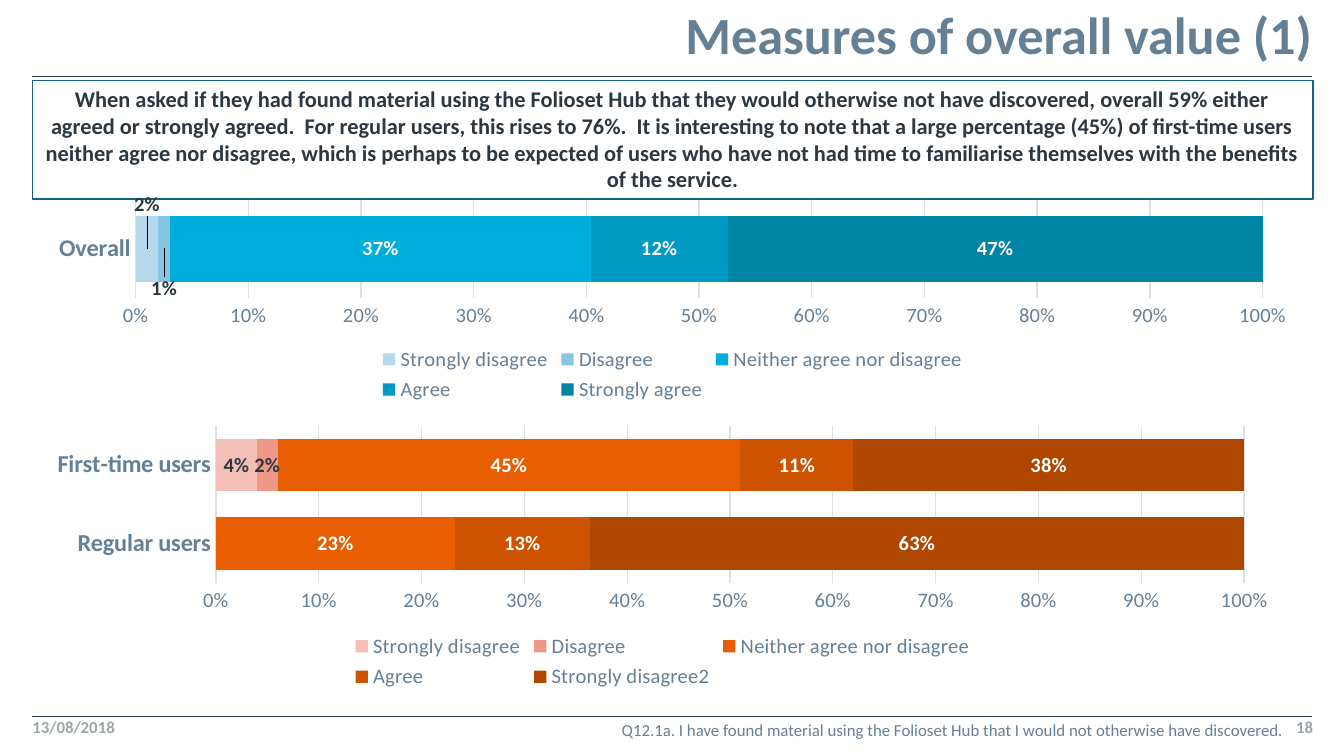
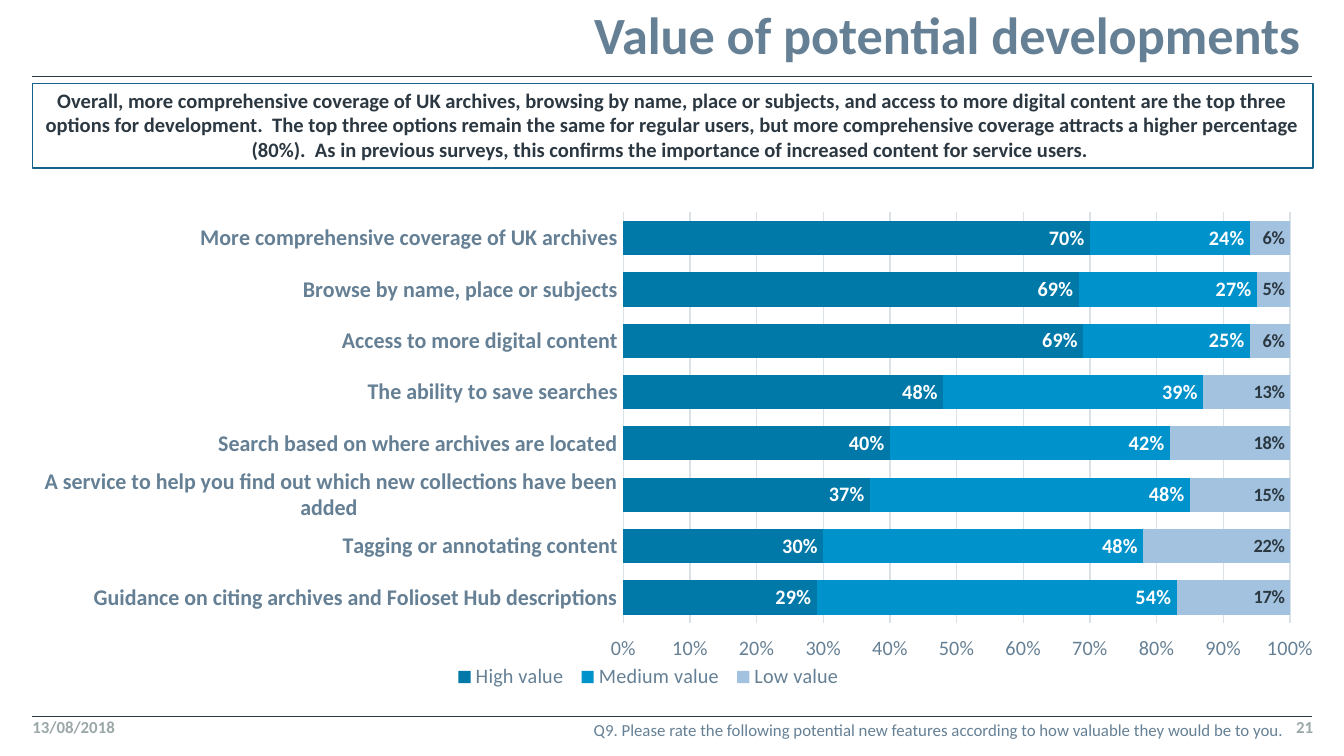
from lxml.etree import SubElement
from pptx import Presentation
from pptx.chart.data import CategoryChartData
from pptx.dml.color import RGBColor
from pptx.enum.chart import (XL_CHART_TYPE, XL_LABEL_POSITION,
                             XL_LEGEND_POSITION, XL_TICK_MARK)
from pptx.enum.shapes import MSO_CONNECTOR, MSO_SHAPE
from pptx.enum.text import MSO_ANCHOR, MSO_AUTO_SIZE, PP_ALIGN
from pptx.oxml.ns import qn
from pptx.util import Inches, Pt

FONT = "Calibri"
HUES = {"ink": "2C3841", "slate": "658095", "grey": "9BA7A8",
        "edge": "136287", "grid": "DBE2E7", "white": "FFFFFF"}
BLUES = ["B6D8EC", "87C5E4", "00AEDB", "009AC2", "0084A6"]
REDS = ["F3BFB6", "EE9987", "E85E00", "CE5300", "B04700"]
VALUES = ["0079A8", "0092CB", "A2C2DF"]
LEFT, RIGHT, WIDE = 0.24, 9.76, 9.53
PAD = (0.08, 0.04, 0.08, 0.04)
C15 = "http://schemas.microsoft.com/office/drawing/2012/chart"
C15_URI = "{CE6537A1-D6FC-4f65-9D91-7224C49458BB}"


def color(name):
    return RGBColor.from_string(HUES.get(name, name))


def style(font, size, hue, bold=False):
    font.name, font.size, font.bold = FONT, Pt(size), bold
    font.color.rgb = color(hue)


def write(shape, text, size=9, hue="slate", bold=False, align=PP_ALIGN.LEFT,
          anchor=MSO_ANCHOR.TOP, pad=(0, 0, 0, 0), space=None):
    frame = shape.text_frame
    frame.word_wrap = True
    frame.auto_size = MSO_AUTO_SIZE.NONE
    frame.vertical_anchor = anchor
    (frame.margin_left, frame.margin_top,
     frame.margin_right, frame.margin_bottom) = map(Inches, pad)
    para = frame.paragraphs[0]
    para.alignment, para.line_spacing = align, space
    run = para.add_run()
    run.text = text
    style(run.font, size, hue, bold)


def place(parent, at, **values):
    """Give a chart element a manual layout as its child number at."""
    for old in parent.findall(qn("c:layout")):
        parent.remove(old)
    layout = SubElement(parent, qn("c:layout"))
    manual = SubElement(layout, qn("c:manualLayout"))
    for key, value in values.items():
        SubElement(manual, qn(f"c:{key}")).set("val", str(value))
    parent.insert(at, layout)


class Deck:
    def __init__(self):
        self.file = Presentation()
        self.file.slide_width = Inches(10)
        self.file.slide_height = Inches(10) * 9 // 16
        self.slide = None

    def page(self, title, left, number, note):
        """Start a slide with its title, rules and footer."""
        self.slide = self.file.slides.add_slide(self.file.slide_layouts[5])
        for y in (0.57, 5.33):
            self.rule(y)
        head = self.slide.shapes.title
        head.left, head.top = Inches(left), Inches(0)
        head.width, head.height = Inches(RIGHT - left), Inches(0.49)
        write(head, title, size=28, bold=True, align=PP_ALIGN.RIGHT,
              anchor=MSO_ANCHOR.BOTTOM, space=0.9)
        self.text("13/08/2018", LEFT, 5.33, 0.79, 0.18, hue="grey", bold=True)
        self.text(number, 8.98, 5.33, 0.79, 0.18, hue="grey", bold=True,
                  align=PP_ALIGN.RIGHT)
        self.text(note, 2.64, 5.32, 6.98, 0.23, align=PP_ALIGN.RIGHT,
                  anchor=MSO_ANCHOR.MIDDLE, pad=PAD, space=0.99)

    def rule(self, y):
        line = self.slide.shapes.add_connector(
            MSO_CONNECTOR.STRAIGHT, Inches(LEFT), Inches(y),
            Inches(RIGHT), Inches(y))
        line.line.color.rgb = color("ink")
        line.line.width = Pt(0.5)
        SubElement(line._element.spPr, qn("a:effectLst"))

    def text(self, words, *box, **form):
        write(self.slide.shapes.add_textbox(*map(Inches, box)), words, **form)

    def panel(self, words, top, height, size):
        box = self.slide.shapes.add_shape(
            MSO_SHAPE.RECTANGLE, Inches(LEFT), Inches(top),
            Inches(WIDE), Inches(height))
        box.shadow.inherit = False
        box.fill.solid()
        box.fill.fore_color.rgb = color("white")
        box.line.color.rgb = color("edge")
        box.line.width = Pt(0.75)
        write(box, words, size=size, hue="ink", bold=True,
              align=PP_ALIGN.CENTER, anchor=MSO_ANCHOR.MIDDLE,
              pad=PAD, space=0.99)

    def chart(self, box, cats, rows, hues, dark, size=13, dark_size=11,
              spot=XL_LABEL_POSITION.CENTER, tick=XL_TICK_MARK.NONE):
        """Draw full-width stacked bars; series listed in dark get ink labels."""
        data = CategoryChartData(number_format="0%")
        data.categories = cats
        for name, vals in rows.items():
            data.add_series(name, vals)
        chart = self.slide.shapes.add_chart(
            XL_CHART_TYPE.BAR_STACKED_100, *map(Inches, box), data).chart
        style(chart.font, 10, "ink")
        clear = SubElement(chart._chartSpace, qn("c:spPr"))
        SubElement(clear, qn("a:noFill"))
        SubElement(SubElement(clear, qn("a:ln")), qn("a:noFill"))
        chart._chartSpace.find(qn("c:txPr")).addprevious(clear)
        chart.has_title = False
        chart.has_legend = True
        chart.legend.position = XL_LEGEND_POSITION.BOTTOM
        chart.legend.include_in_layout = False
        style(chart.legend.font, 11, "slate")
        self.axes(chart, size, tick)
        plot = chart.plots[0]
        plot.gap_width, plot.overlap = 50, 100
        plot.vary_by_categories = False
        for i, (series, hue) in enumerate(zip(plot.series, hues)):
            series.format.fill.solid()
            series.format.fill.fore_color.rgb = color(hue)
            labels = series.data_labels
            labels.show_value = True
            labels.number_format = "0%"
            labels.number_format_is_linked = False
            labels.position = spot
            if i in dark:
                style(labels.font, dark_size, "ink", True)
            else:
                style(labels.font, 11, "white", True)
            for at, value in enumerate(series.values):
                if not value:
                    self.hide(labels, at)
        return chart

    def axes(self, chart, size, tick):
        cat, val = chart.category_axis, chart.value_axis
        style(cat.tick_labels.font, size, "slate", True)
        style(val.tick_labels.font, 11, "slate")
        cat.major_tick_mark = XL_TICK_MARK.NONE
        val.major_tick_mark = tick
        val.tick_labels.number_format = "0%"
        val.tick_labels.number_format_is_linked = False
        val.format.line.fill.background()
        val.has_major_gridlines = True
        for part in (cat, val.major_gridlines):
            part.format.line.color.rgb = color("grid")
            part.format.line.width = Pt(0.75)

    def hide(self, labels, at):
        label = SubElement(labels._element, qn("c:dLbl"))
        SubElement(label, qn("c:idx")).set("val", str(at))
        SubElement(label, qn("c:delete")).set("val", "1")
        labels._element.insert(0, label)

    def shift(self, series, y):
        """Move a first label by a fraction of the chart, with no leader."""
        label = series.points[0].data_label
        style(label.font, 11, "ink", True)
        label.position = XL_LABEL_POSITION.CENTER
        labels = series.data_labels._element
        place(labels.find(qn("c:dLbl")), 1, x=0, y=y)
        more = SubElement(labels, qn("c:extLst"))
        more = SubElement(more, qn("c:ext"), nsmap={"c15": C15})
        more.set("uri", C15_URI)
        SubElement(more, f"{{{C15}}}showLeaderLines").set("val", "0")


def overall(deck):
    deck.page("Measures of overall value (1)", 2.05, "18",
              "Q12.1a. I have found material using the Folioset Hub that I "
              "would not otherwise have discovered.")
    deck.panel("When asked if they had found material using the Folioset Hub "
               "that they would otherwise not have discovered, overall 59% "
               "either agreed or strongly agreed.  For regular users, this "
               "rises to 76%.  It is interesting to note that a large "
               "percentage (45%) of first-time users neither agree nor "
               "disagree, which is perhaps to be expected of users who have "
               "not had time to familiarise themselves with the benefits of "
               "the service.", 0.6, 0.88, 12)
    names = ["Strongly disagree", "Disagree", "Neither agree nor disagree",
             "Agree"]
    total = dict(zip(names + ["Strongly agree"],
                     [[0.02], [0.01], [0.37], [0.12], [0.47]]))
    chart = deck.chart((0.25, 1.43, 9.51, 1.6), ["Overall"], total, BLUES,
                       dark=(0, 1))
    for series, y in zip(chart.plots[0].series, (-0.21, 0.19)):
        deck.shift(series, y)
    split = dict(zip(names + ["Strongly disagree2"],
                     [[0, 0.04], [0, 0.02], [0.23, 0.45], [0.13, 0.11],
                      [0.63, 0.38]]))
    deck.chart((LEFT, 3.13, 9.38, 2.04), ["Regular users", "First-time users"],
               split, REDS, dark=(0, 1))


def future(deck):
    deck.page("Value of potential developments ", 1.98, "21",
              "Q9. Please rate the following potential new features according "
              "to how valuable they would be to you.")
    deck.panel("Overall, more comprehensive coverage of UK archives, browsing "
               "by name, place or subjects, and access to more digital content "
               "are the top three options for development.  The top three "
               "options remain the same for regular users, but more "
               "comprehensive coverage attracts a higher percentage (80%).  As "
               "in previous surveys, this confirms the importance of increased "
               "content for service users. ", 0.62, 0.63, 11)
    cats = ["Guidance on citing archives and Folioset Hub descriptions",
            "Tagging or annotating content",
            "A service to help you find out which new collections have been "
            "added ",
            "Search based on where archives are located",
            "The ability to save searches",
            "Access to more digital content",
            "Browse by name, place or subjects",
            "More comprehensive coverage of UK archives"]
    rows = {
        "High value": [0.29, 0.3, 0.37, 0.4, 0.48, 0.69, 0.69, 0.7],
        "Medium value": [0.54, 0.48, 0.48, 0.42, 0.39, 0.25, 0.27, 0.24],
        "Low value": [0.17, 0.22, 0.15, 0.18, 0.13, 0.06, 0.05, 0.06]}
    chart = deck.chart((LEFT, 1.39, WIDE, 3.82), cats, rows, VALUES,
                       dark=(2,), size=12, dark_size=10,
                       spot=XL_LABEL_POSITION.INSIDE_END,
                       tick=XL_TICK_MARK.OUTSIDE)
    place(chart._chartSpace.chart.plotArea, 0, layoutTarget="inner",
          xMode="edge", yMode="edge", x=0.47, y=0.05, w=0.53, h=0.8)
    place(chart.legend._element, 1, xMode="edge", yMode="edge",
          x=0.33, y=0.92, w=0.32, h=0.07)


def main():
    deck = Deck()
    overall(deck)
    future(deck)
    deck.file.save("out.pptx")


if __name__ == "__main__":
    main()
